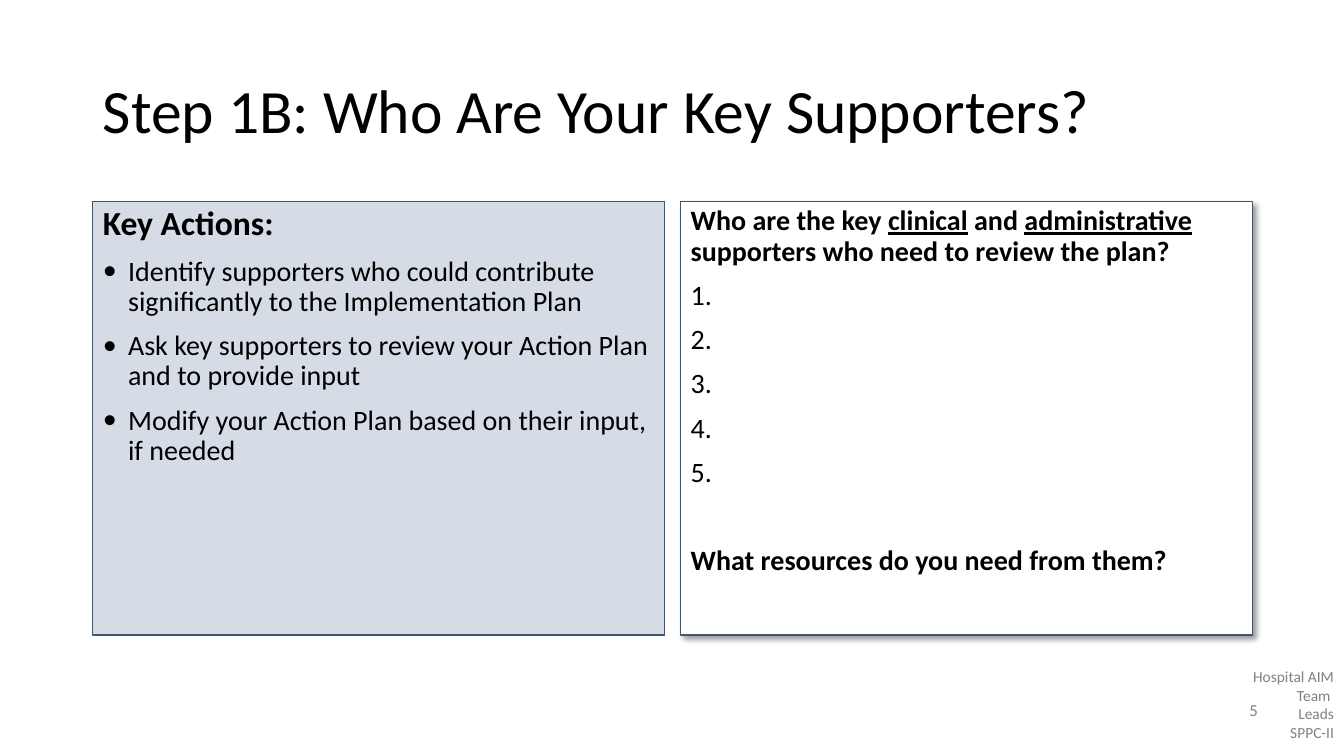
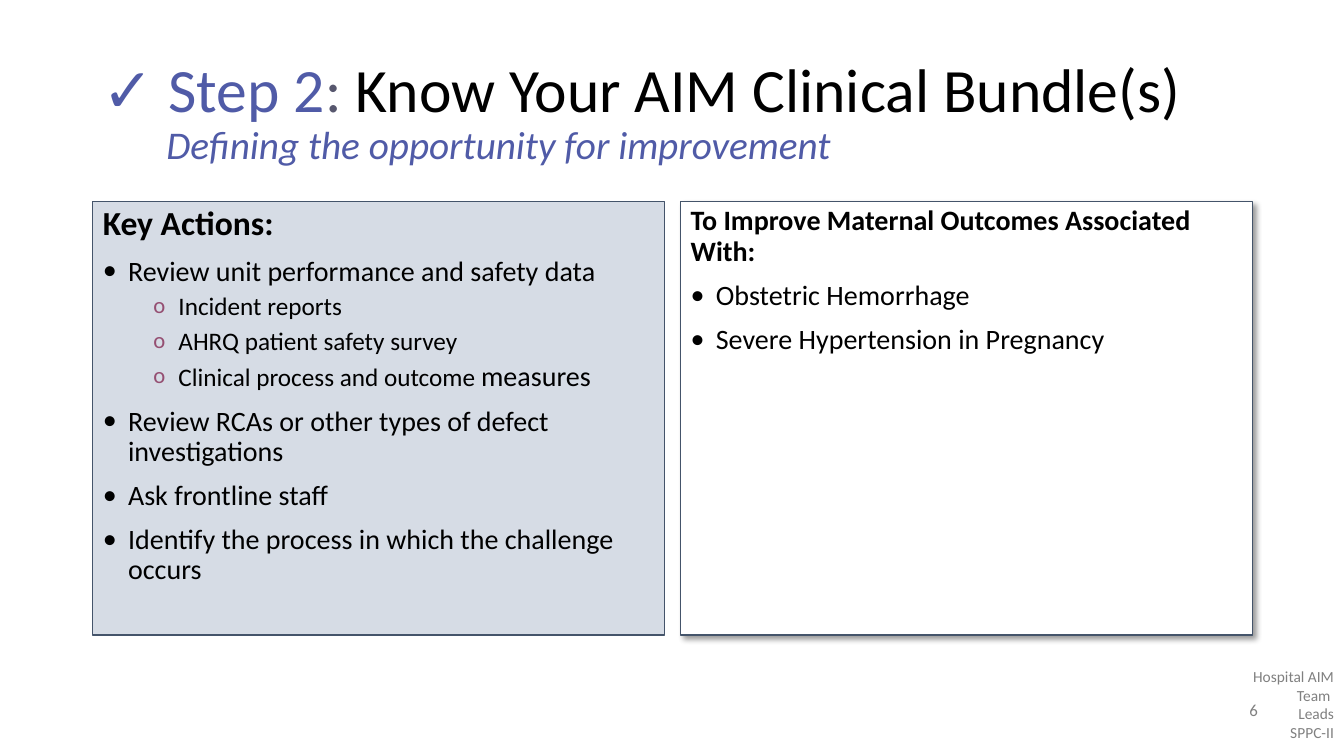
from dataclasses import dataclass

from lxml import etree
from pptx import Presentation
from pptx.dml.color import RGBColor
from pptx.enum.text import MSO_ANCHOR, MSO_AUTO_SIZE, PP_ALIGN
from pptx.oxml.ns import qn
from pptx.util import Emu, Pt

LEFT, CENTER, RIGHT = PP_ALIGN.LEFT, PP_ALIGN.CENTER, PP_ALIGN.RIGHT
TOP, MIDDLE = MSO_ANCHOR.TOP, MSO_ANCHOR.MIDDLE
NO_AUTOFIT = MSO_AUTO_SIZE.NONE
PX = 9144
TWO_CONTENT = 3
BREAK = "\v"


@dataclass(frozen=True)
class Theme:
    font: str = "Calibri"
    ink: str = "000000"
    accent: str = "505BA7"
    colon: str = "57576E"
    muted: str = "808080"
    sub_bullet: str = "954F72"
    actions_fill: str = "D6DCE5"
    answers_fill: str = "FFFFFF"
    border: str = "44546A"
    border_width: float = 0.75
    title: int = 44
    subtitle: int = 28
    heading: int = 24
    body: int = 20
    sub: int = 18
    page: int = 12
    footer: int = 11
    line_spacing: float = 0.9


THEME = Theme()

SLIDE_SIZE = (1333, 750)
TITLE_BOX = (92, 40, 1150, 145)
PANEL_LEFT, PANEL_TOP, PANEL_WIDTH, PANEL_HEIGHT, PANEL_GAP = 92, 200, 567, 430, 16
PANEL_FILLS = (THEME.actions_fill, THEME.answers_fill)
FOOTER_BOX = (1217, 657, 116, 84)
PAGE_BOX = (1220, 684, 47, 40)
FOOTER_LINES = ("Hospital AIM Team ", "Leads", "SPPC-II")

STYLES = {
    "heading": dict(size=THEME.heading, bold=True),
    "question": dict(size=THEME.body, bold=True),
    "closing": dict(size=THEME.body, bold=True, before=41.5),
    "plain": dict(size=THEME.body),
    "bullet": dict(size=THEME.body, margin=25, hang=25, bullet="•"),
    "sub": dict(size=THEME.sub, margin=75, hang=25, bullet="o", level=1, before=5,
                bullet_color=THEME.sub_bullet, bullet_percent=90),
    "title": dict(size=THEME.title),
    "step title": dict(size=THEME.title, margin=63, hang=63),
}

UNDERLINED = dict(underline=True)

SLIDES = [
    {
        "page": "5",
        "title": ("title", "Step 1B: Who Are Your Key Supporters?"),
        "panels": [
            [
                ("heading", "Key Actions:"),
                ("bullet", "Identify supporters who could contribute significantly to the Implementation Plan"),
                ("bullet", "Ask key supporters to review your Action Plan and to provide input"),
                ("bullet", "Modify your Action Plan based on their input, if needed"),
            ],
            [
                ("question", [("Who are the key ", {}), ("clinical", UNDERLINED), (" and ", {}),
                              ("administrative", UNDERLINED),
                              (" supporters who need to review the plan?", {})]),
                *[("plain", f"{number}.") for number in range(1, 6)],
                ("closing", "What resources do you need from them?"),
            ],
        ],
    },
    {
        "page": "6",
        "title": ("step title", [
            ("✓ Step 2", dict(color=THEME.accent)),
            (": ", dict(color=THEME.colon)),
            ("Know Your AIM Clinical Bundle(s)", {}),
            (BREAK, {}),
            ("Defining the opportunity for improvement",
             dict(color=THEME.accent, size=THEME.subtitle, italic=True)),
        ]),
        "panels": [
            [
                ("heading", "Key Actions:"),
                ("bullet", "Review unit performance and safety data"),
                ("sub", "Incident reports"),
                ("sub", "AHRQ patient safety survey"),
                ("sub", [("Clinical process and outcome ", {}),
                         ("measures", dict(size=THEME.body))]),
                ("bullet", "Review RCAs or other types of defect investigations"),
                ("bullet", "Ask frontline staff"),
                ("bullet", "Identify the process in which the challenge occurs"),
            ],
            [
                ("question", "To Improve Maternal Outcomes Associated With:"),
                ("bullet", "Obstetric Hemorrhage"),
                ("bullet", "Severe Hypertension in Pregnancy"),
            ],
        ],
    },
]


def place(shape, box):
    shape.left, shape.top, shape.width, shape.height = (Emu(length * PX) for length in box)


def format_run(run, size, color=THEME.ink, bold=False, italic=False, underline=False):
    font = run.font
    font.name, font.size = THEME.font, Pt(size)
    font.bold, font.italic, font.underline = bold, italic, underline
    font.color.rgb = RGBColor.from_string(color)


def set_bullet(paragraph, style):
    properties = paragraph._p.get_or_add_pPr()
    properties.set("marL", str(style.get("margin", 0) * PX))
    properties.set("indent", str(-style.get("hang", 0) * PX))
    if "bullet" not in style:
        etree.SubElement(properties, qn("a:buNone"))
        return
    if "bullet_color" in style:
        tint = etree.SubElement(properties, qn("a:buClr"))
        etree.SubElement(tint, qn("a:srgbClr"), val=style["bullet_color"])
        etree.SubElement(properties, qn("a:buSzPct"), val=str(style["bullet_percent"] * 1000))
    etree.SubElement(properties, qn("a:buFont"), typeface=THEME.font)
    etree.SubElement(properties, qn("a:buChar"), char=style["bullet"])


def write_paragraph(paragraph, style_name, content, first):
    style = STYLES[style_name]
    set_bullet(paragraph, style)
    paragraph.level = style.get("level", 0)
    paragraph.alignment = LEFT
    paragraph.line_spacing = THEME.line_spacing
    paragraph.space_before = Pt(0 if first else style.get("before", 10))
    paragraph.space_after = Pt(0)
    pieces = [(content, {})] if isinstance(content, str) else content
    base = dict(size=style["size"], bold=style.get("bold", False))
    for text, changes in pieces:
        if text == BREAK:
            paragraph.add_line_break()
            continue
        run = paragraph.add_run()
        run.text = text
        format_run(run, **{**base, **changes})


def write_text(shape, paragraphs, anchor):
    frame = shape.text_frame
    frame.word_wrap, frame.auto_size, frame.vertical_anchor = True, NO_AUTOFIT, anchor
    for index, (style_name, content) in enumerate(paragraphs):
        paragraph = frame.add_paragraph() if index else frame.paragraphs[0]
        write_paragraph(paragraph, style_name, content, index == 0)


def add_shadow(shape):
    effects = shape._element.spPr.find(qn("a:effectLst"))
    shadow = etree.SubElement(effects, qn("a:outerShdw"), blurRad=str(Pt(4)), dist=str(Pt(3)),
                              dir="2700000", algn="tl", rotWithShape="0")
    tint = etree.SubElement(shadow, qn("a:srgbClr"), val="000000")
    etree.SubElement(tint, qn("a:alpha"), val="40000")


def fill_panel(panel, column, paragraphs):
    left = PANEL_LEFT + column * (PANEL_WIDTH + PANEL_GAP)
    place(panel, (left, PANEL_TOP, PANEL_WIDTH, PANEL_HEIGHT))
    panel.fill.solid()
    panel.fill.fore_color.rgb = RGBColor.from_string(PANEL_FILLS[column])
    panel.line.color.rgb = RGBColor.from_string(THEME.border)
    panel.line.width = Pt(THEME.border_width)
    panel.shadow.inherit = False
    if column == 1:
        add_shadow(panel)
    write_text(panel, paragraphs, TOP)


def add_note(slide, box, lines, size, alignment, anchor):
    note = slide.shapes.add_textbox(*(Emu(length * PX) for length in box))
    frame = note.text_frame
    frame.word_wrap, frame.vertical_anchor = True, anchor
    frame.text = "\n".join(lines)
    for paragraph in frame.paragraphs:
        paragraph.alignment = alignment
        format_run(paragraph.runs[0], size, THEME.muted)


def build_slide(presentation, content):
    slide = presentation.slides.add_slide(presentation.slide_layouts[TWO_CONTENT])
    title, *panels = slide.placeholders
    place(title, TITLE_BOX)
    write_text(title, [content["title"]], MIDDLE)
    for column, (panel, paragraphs) in enumerate(zip(panels, content["panels"])):
        fill_panel(panel, column, paragraphs)
    add_note(slide, FOOTER_BOX, FOOTER_LINES, THEME.footer, RIGHT, TOP)
    add_note(slide, PAGE_BOX, [content["page"]], THEME.page, CENTER, MIDDLE)


def main():
    presentation = Presentation()
    presentation.slide_width, presentation.slide_height = (Emu(length * PX) for length in SLIDE_SIZE)
    for content in SLIDES:
        build_slide(presentation, content)
    presentation.save("out.pptx")


if __name__ == "__main__":
    main()
